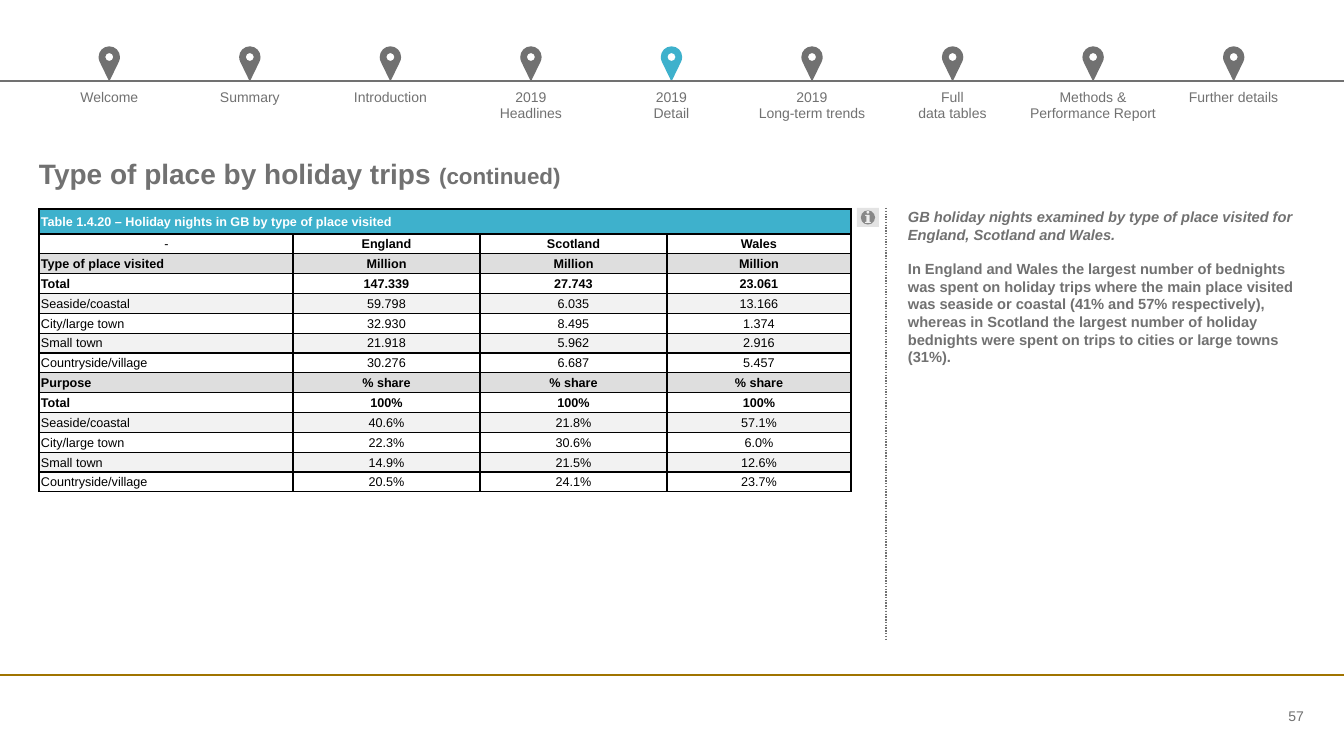
from dataclasses import dataclass

from lxml import etree
from pptx import Presentation
from pptx import util as u
from pptx.dml.color import RGBColor
from pptx.enum import dml, shapes, text
from pptx.oxml import ns

PX = 914400 / 100.8
LEFT, CENTER, RIGHT = text.PP_ALIGN.LEFT, text.PP_ALIGN.CENTER, text.PP_ALIGN.RIGHT
TOP, MIDDLE = text.MSO_ANCHOR.TOP, text.MSO_ANCHOR.MIDDLE

# Bezier points around the centre of the pin head: a start, then three for each curve.
PIN_BODY = [(10.7, 0), (10.7, -5.9), (5.9, -10.7), (0, -10.7),
            (-5.9, -10.7), (-10.7, -5.9), (-10.7, 0),
            (-10.7, 1.8), (-10.3, 3.5), (-9.5, 5),
            (-9.5, 5), (0, 24.5), (0, 24.5),
            (0, 24.5), (9.5, 5), (9.5, 5),
            (10.3, 3.5), (10.7, 1.8), (10.7, 0)]
PIN_HOLE = [(0, 4), (-2.2, 4), (-4, 2.2), (-4, 0), (-4, -2.2), (-2.2, -4), (0, -4),
            (2.2, -4), (4, -2.2), (4, 0), (4, 2.2), (2.2, 4), (0, 4)]


@dataclass(frozen=True)
class Theme:
    font: str = "Arial"
    grey: str = "717171"
    accent: str = "3EB1CC"
    gold: str = "A07400"
    black: str = "000000"
    white: str = "FFFFFF"
    section: str = "DEDEDE"
    band: str = "F2F2F2"
    button: str = "E3E3E3"
    title: float = 20
    subtitle: float = 16
    body: float = 10.5
    label: float = 10
    cell: float = 9


def emu(px):
    return u.Emu(round(px * PX))


def rgb(colour):
    return RGBColor.from_string(colour)


def curve_outline(sp):
    """Turn each three straight segments of a freeform into one Bezier curve."""
    path = sp._element.find(".//" + ns.qn("a:path"))
    segments = path.findall(ns.qn("a:lnTo"))
    for i in range(0, len(segments), 3):
        curve = etree.Element(ns.qn("a:cubicBezTo"))
        segments[i].addprevious(curve)
        for segment in segments[i:i + 3]:
            curve.append(segment[0])
            path.remove(segment)


class SlideBuilder:
    def __init__(self, slide, theme):
        self.s = slide
        self.theme = theme

    def style(self, p, size, colour, bold=False, italic=False, align=LEFT):
        p.alignment = align
        for r in p.runs:
            r.font.name, r.font.size = self.theme.font, u.Pt(size)
            r.font.bold, r.font.italic = bold, italic
            r.font.color.rgb = rgb(colour)

    def textbox(self, x, y, w, h, content, anchor=TOP):
        tf = self.s.shapes.add_textbox(emu(x), emu(y), emu(w), emu(h)).text_frame
        tf.word_wrap = True
        tf.margin_left = tf.margin_right = tf.margin_top = tf.margin_bottom = 0
        tf.vertical_anchor = anchor
        tf.text = content
        return tf

    def line(self, x1, y1, x2, y2, colour, width, dash=None):
        c = self.s.shapes.add_connector(
            shapes.MSO_CONNECTOR.STRAIGHT, emu(x1), emu(y1), emu(x2), emu(y2))
        c.line.color.rgb = rgb(colour)
        c.line.width = u.Pt(width)
        if dash:
            c.line.dash_style = dash
        etree.SubElement(c._element.spPr, ns.qn("a:effectLst"))

    def paint(self, sp, colour):
        sp.shadow.inherit = False
        sp.fill.solid()
        sp.fill.fore_color.rgb = rgb(colour)
        sp.line.fill.background()

    def pin(self, x, y, colour):
        """Map pin whose round head, with a hole, is centred on x, y."""
        body, hole = ([(emu(x + dx), emu(y + dy)) for dx, dy in points]
                      for points in (PIN_BODY, PIN_HOLE))
        fb = self.s.shapes.build_freeform(*body[0])
        fb.add_line_segments(body[1:], close=True)
        fb.move_to(*hole[0])
        fb.add_line_segments(hole[1:], close=True)
        sp = fb.convert_to_shape()
        curve_outline(sp)
        self.paint(sp, colour)

    def info_button(self, x, y, w, h):
        sp = self.s.shapes.add_shape(
            shapes.MSO_SHAPE.ACTION_BUTTON_INFORMATION, emu(x), emu(y), emu(w), emu(h))
        self.paint(sp, self.theme.button)

    def table(self, x, y, widths, heights):
        tbl = self.s.shapes.add_table(
            len(heights), len(widths), emu(x), emu(y), emu(sum(widths)), emu(sum(heights))).table
        tbl.first_row = tbl.horz_banding = False
        for col, width in zip(tbl.columns, widths):
            col.width = emu(width)
        for row, height in zip(tbl.rows, heights):
            row.height = emu(height)
        return tbl

    def cell(self, cell, content, size, colour, margins=(0, 0, 0, 0), anchor=TOP,
             align=CENTER, bold=False, fill=None):
        cell.text = content
        cell.margin_left, cell.margin_top, cell.margin_right, cell.margin_bottom = map(emu, margins)
        cell.vertical_anchor = anchor
        for p in cell.text_frame.paragraphs:
            self.style(p, size, colour, bold, align=align)
        if fill:
            cell.fill.solid()
            cell.fill.fore_color.rgb = rgb(fill)
        else:
            cell.fill.background()

    def borders(self, cell, colour):
        tcPr = cell._tc.get_or_add_tcPr()
        for i, side in enumerate(("lnL", "lnR", "lnT", "lnB")):
            ln = etree.Element(ns.qn("a:" + side), w=str(u.Pt(1)))
            fill = etree.SubElement(ln, ns.qn("a:solidFill"))
            etree.SubElement(fill, ns.qn("a:srgbClr"), val=colour)
            tcPr.insert(i, ln)

    def navigation(self, labels, current):
        t = self.theme
        left, pitch = 39, 1265 / len(labels)
        tbl = self.table(left, 90, [pitch] * len(labels), [35])
        for i, label in enumerate(labels):
            self.cell(tbl.cell(0, i), label, t.label, t.grey)
            self.pin(left + pitch * (i + 0.5), 57, t.accent if i == current else t.grey)
        self.line(0, 81, 1344, 81, t.grey, 1.25)

    def data_table(self, x, y, caption, rows):
        t = self.theme
        tbl = self.table(x, y, [254, 187, 187, 184], [25] + [258 / len(rows)] * len(rows))
        tbl.cell(0, 0).merge(tbl.cell(0, 3))
        self.cell(tbl.cell(0, 0), caption, t.cell, t.white, (2, 1, 1, 0), MIDDLE, LEFT, True, t.accent)
        for i, row in enumerate(rows, 1):
            name = row[0]
            heading = name == "-"
            section = name in ("Type of place visited", "Purpose")
            banded = name in ("Seaside/coastal", "Small town")
            fill = t.section if section else t.band if banded else None
            strong = section or name == "Total"
            for j, value in enumerate(row):
                self.cell(tbl.cell(i, j), value, t.cell, t.black, (1 if j else 2, 1, 1, 0), MIDDLE,
                          CENTER if j or heading else LEFT, strong or (heading and j > 0), fill)
        for c in tbl.iter_cells():
            self.borders(c, t.black)

    def title(self, main, suffix):
        t = self.theme
        p = self.textbox(39, 157, 1262, 35, main).paragraphs[0]
        self.style(p, t.title, t.grey, bold=True)
        r = p.add_run()
        r.text = suffix
        r.font.name, r.font.size, r.font.bold = t.font, u.Pt(t.subtitle), True
        r.font.color.rgb = rgb(t.grey)

    def commentary(self, x, y, w, h, summary, detail):
        t = self.theme
        tf = self.textbox(x, y, w, h, summary + "\n" + detail)
        for i, p in enumerate(tf.paragraphs):
            self.style(p, t.body, t.grey, bold=True, italic=i == 0)
            if i:
                p.space_before = u.Pt(12)

    def page_number(self, number):
        tf = self.textbox(1197, 705, 107, 22, number, MIDDLE)
        self.style(tf.paragraphs[0], self.theme.label, self.theme.grey, align=RIGHT)


NAVIGATION = ["Welcome", "Summary", "Introduction", "2019\nHeadlines", "2019\nDetail",
              "2019\nLong-term trends", "Full\vdata tables", "Methods & Performance Report",
              "Further details"]
HOLIDAY_NIGHTS = [
    ("-", "England", "Scotland", "Wales"),
    ("Type of place visited", "Million", "Million", "Million"),
    ("Total", "147.339", "27.743", "23.061"),
    ("Seaside/coastal", "59.798", "6.035", "13.166"),
    ("City/large town", "32.930", "8.495", "1.374"),
    ("Small town", "21.918", "5.962", "2.916"),
    ("Countryside/village", "30.276", "6.687", "5.457"),
    ("Purpose", "% share", "% share", "% share"),
    ("Total", "100%", "100%", "100%"),
    ("Seaside/coastal", "40.6%", "21.8%", "57.1%"),
    ("City/large town", "22.3%", "30.6%", "6.0%"),
    ("Small town", "14.9%", "21.5%", "12.6%"),
    ("Countryside/village", "20.5%", "24.1%", "23.7%"),
]


def main():
    prs = Presentation()
    prs.slide_width, prs.slide_height = emu(1344), emu(756)
    theme = Theme()
    b = SlideBuilder(prs.slides.add_slide(prs.slide_layouts[6]), theme)
    b.line(0, 675, 1344, 675, theme.gold, 1.5)
    b.navigation(NAVIGATION, current=4)
    b.title("Type of place by holiday trips ", "(continued)")
    b.data_table(39, 209, "Table 1.4.20 – Holiday nights in GB by type of place visited", HOLIDAY_NIGHTS)
    b.commentary(
        908, 208, 396, 421,
        "GB holiday nights examined by type of place visited for England, Scotland and Wales.",
        "In England and Wales the largest number of bednights was spent on holiday trips where the "
        "main place visited was seaside or coastal (41% and 57% respectively), whereas in Scotland "
        "the largest number of holiday bednights were spent on trips to cities or large towns (31%).")
    b.line(886, 208, 886, 640, theme.grey, 1, dml.MSO_LINE.ROUND_DOT)
    b.info_button(857, 208, 22, 19)
    b.page_number("57")
    prs.save("out.pptx")


if __name__ == "__main__":
    main()
